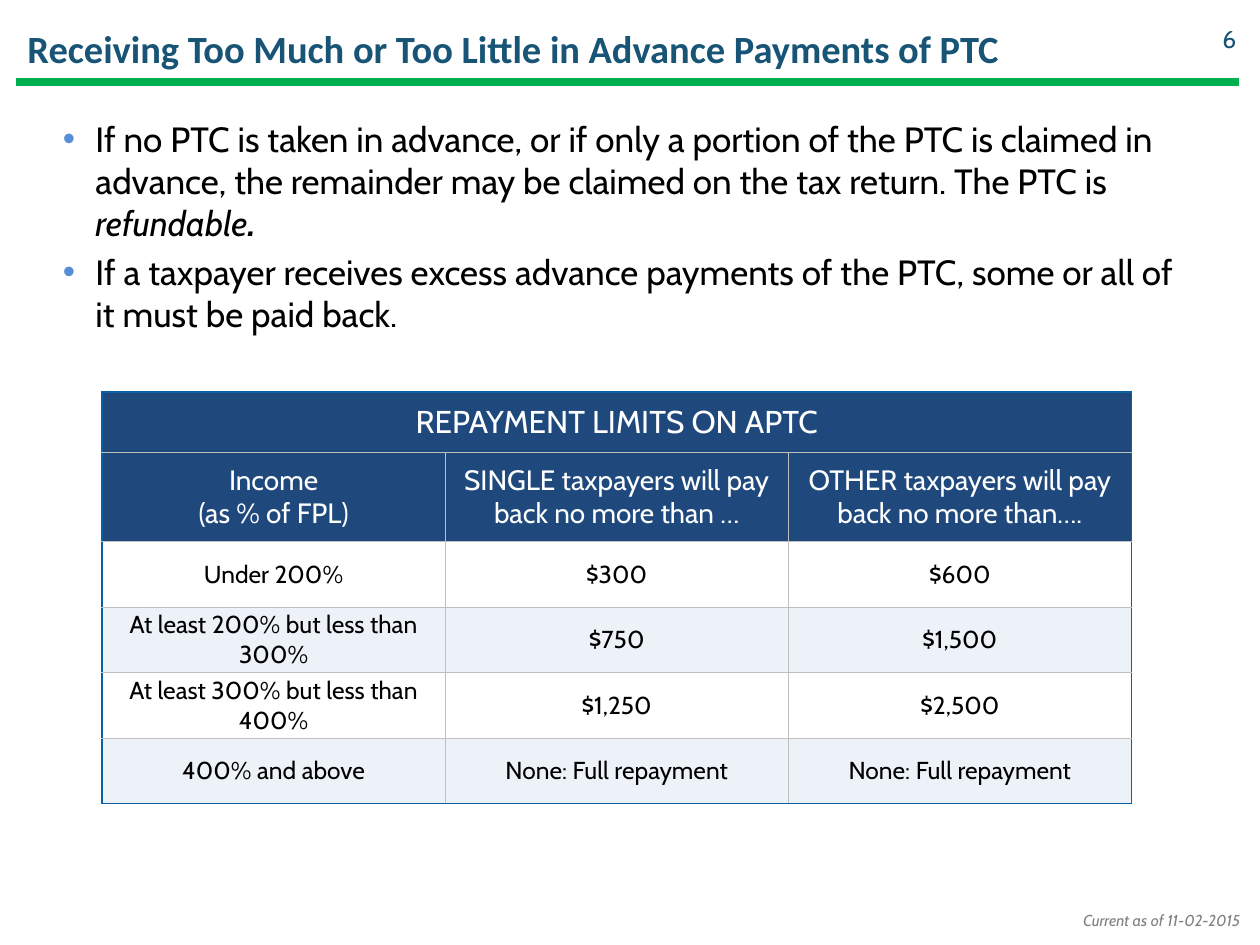
from typing import NamedTuple

from lxml.etree import SubElement
from pptx import Presentation
from pptx.dml.color import RGBColor
from pptx.enum.shapes import MSO_CONNECTOR
from pptx.enum.text import MSO_ANCHOR as Anchor, PP_ALIGN as Align
from pptx.oxml.ns import qn
from pptx.util import Inches, Pt

BLACK = RGBColor(0x00, 0x00, 0x00)
WHITE = RGBColor(0xFF, 0xFF, 0xFF)
GRAY = RGBColor(0x80, 0x80, 0x80)
TEAL = RGBColor(0x17, 0x54, 0x75)
GREEN = RGBColor(0x00, 0xB0, 0x50)
BULLET_BLUE = RGBColor(0x55, 0x8E, 0xD5)
HEADER_BLUE = RGBColor(0x1F, 0x49, 0x7D)
BAND_BLUE = RGBColor(0xEC, 0xF2, 0xF8)
EDGE_BLUE = RGBColor(0x0C, 0x61, 0xA4)
GRID_GRAY = RGBColor(0xBF, 0xBF, 0xBF)


class Run(NamedTuple):
    text: str
    bold: bool = False
    italic: bool = False


class Border(NamedTuple):
    color: RGBColor
    points: float


class RowStyle(NamedTuple):
    height: float
    size: int
    color: RGBColor
    fill: RGBColor


EDGE = Border(EDGE_BLUE, 1)
GRID = Border(GRID_GRAY, 0.5)

BULLETS = [
    [
        Run("If no PTC is taken in advance, or if only a portion of the PTC is claimed in "
            "advance, the remainder may be claimed on the tax return. The PTC is "),
        Run("refundable", italic=True),
        Run(".", bold=True, italic=True),
    ],
    [Run("If a taxpayer receives excess advance payments of the PTC, "
         "some or all of it must be paid back.")],
]

TITLE_ROW = RowStyle(0.48, 18, WHITE, HEADER_BLUE)
HEADER_ROW = RowStyle(0.71, 16, WHITE, HEADER_BLUE)
PLAIN_ROW = RowStyle(0.52, 14, BLACK, WHITE)
BAND_ROW = PLAIN_ROW._replace(fill=BAND_BLUE)

LIMITS = [
    (TITLE_ROW, ["REPAYMENT LIMITS ON APTC"]),
    (HEADER_ROW, ["Income\n(as % of FPL)",
                  "SINGLE taxpayers will pay back no more than …",
                  "OTHER taxpayers will pay back no more than…."]),
    (PLAIN_ROW, ["Under 200%", "$300", "$600"]),
    (BAND_ROW, ["At least 200% but less than 300%", "$750", "$1,500"]),
    (PLAIN_ROW, ["At least 300% but less than 400%", "$1,250", "$2,500"]),
    (BAND_ROW, ["400% and above", "None: Full repayment", "None: Full repayment"]),
]


def add_bullet(paragraph) -> None:
    properties = paragraph._p.get_or_add_pPr()
    properties.set("marL", str(Inches(0.26)))
    properties.set("indent", str(-Inches(0.26)))
    color = SubElement(properties, qn("a:buClr"))
    SubElement(color, qn("a:srgbClr"), val=str(BULLET_BLUE))
    SubElement(properties, qn("a:buFont"), typeface="Arial")
    SubElement(properties, qn("a:buChar"), char="•")


def write_text(frame, paragraphs: list[list[Run]], *, size: float, color: RGBColor,
               font: str = "Cabin", align: Align = Align.LEFT,
               bullets: bool = False, gap: float = 0) -> None:
    frame.word_wrap = True
    for index, runs in enumerate(paragraphs):
        paragraph = frame.paragraphs[0] if index == 0 else frame.add_paragraph()
        paragraph.alignment = align
        if index and gap:
            paragraph.space_before = Pt(gap)
        if bullets:
            add_bullet(paragraph)
        for item in runs:
            run = paragraph.add_run()
            run.text = item.text
            run.font.name = font
            run.font.size = Pt(size)
            run.font.color.rgb = color
            run.font.bold = item.bold
            run.font.italic = item.italic


def add_text(slide, left: float, top: float, width: float, height: float,
             paragraphs: list[list[Run]], *, anchor: Anchor = Anchor.TOP, **text_format) -> None:
    box = slide.shapes.add_textbox(Inches(left), Inches(top), Inches(width), Inches(height))
    box.text_frame.vertical_anchor = anchor
    write_text(box.text_frame, paragraphs, **text_format)


def add_rule(slide) -> None:
    rule = slide.shapes.add_connector(
        MSO_CONNECTOR.STRAIGHT, Inches(0.13), Inches(0.65), Inches(9.83), Inches(0.65))
    rule.line.color.rgb = GREEN
    rule.line.width = Pt(4.75)
    SubElement(rule._element.spPr, qn("a:effectLst"))


def set_borders(cell, borders: dict[str, Border]) -> None:
    properties = cell._tc.get_or_add_tcPr()
    for side, border in borders.items():
        line = SubElement(properties, qn(f"a:ln{side}"), w=str(Pt(border.points)))
        fill = SubElement(line, qn("a:solidFill"))
        SubElement(fill, qn("a:srgbClr"), val=str(border.color))


def add_limits_table(slide) -> None:
    row_count, column_count = len(LIMITS), 3
    height = sum(style.height for style, _ in LIMITS)
    table = slide.shapes.add_table(row_count, column_count, Inches(0.81), Inches(3.11),
                                   Inches(8.17), Inches(height)).table
    table.cell(0, 0).merge(table.cell(0, column_count - 1))

    for row, (style, texts) in enumerate(LIMITS):
        table.rows[row].height = Inches(style.height)
        is_title = row == 0
        for column in range(column_count):
            cell = table.cell(row, column)
            # Blue around the table, gray between the cells
            set_borders(cell, {
                "L": EDGE if is_title or column == 0 else GRID,
                "R": EDGE if is_title or column == column_count - 1 else GRID,
                "T": EDGE if is_title else GRID,
                "B": EDGE if row == row_count - 1 else GRID,
            })
            cell.fill.solid()
            cell.fill.fore_color.rgb = style.fill
            cell.vertical_anchor = Anchor.MIDDLE
            cell.margin_left = cell.margin_right = Inches(0 if is_title else 0.03)
            cell.margin_top = cell.margin_bottom = Inches(0 if is_title else 0.01)
            if column < len(texts):
                lines = [[Run(line)] for line in texts[column].split("\n")]
                write_text(cell.text_frame, lines, size=style.size,
                           color=style.color, align=Align.CENTER)


def main() -> None:
    presentation = Presentation()
    presentation.slide_width = Inches(10)
    presentation.slide_height = Inches(7.5)
    slide = presentation.slides.add_slide(presentation.slide_layouts[6])

    # Date note and header rule
    add_text(slide, 8.31, 7.18, 1.63, 0.25, [[Run("Current as of 11-02-2015", italic=True)]],
             size=9, color=GRAY, align=Align.RIGHT)
    add_rule(slide)

    # Title, body and page number
    title = "Receiving Too Much or Too Little in Advance Payments of PTC"
    add_text(slide, 0.12, 0.1, 9.44, 0.57, [[Run(title, bold=True)]],
             size=22, color=TEAL, font="Calibri", anchor=Anchor.MIDDLE)
    add_text(slide, 0.4, 0.88, 9.16, 5.49, BULLETS,
             size=20, color=BLACK, bullets=True, gap=4)
    add_text(slide, 9.4, 0.11, 0.51, 0.4, [[Run("6")]],
             size=14, color=TEAL, align=Align.RIGHT, anchor=Anchor.MIDDLE)

    # Repayment limits
    add_limits_table(slide)
    presentation.save("out.pptx")


if __name__ == "__main__":
    main()
